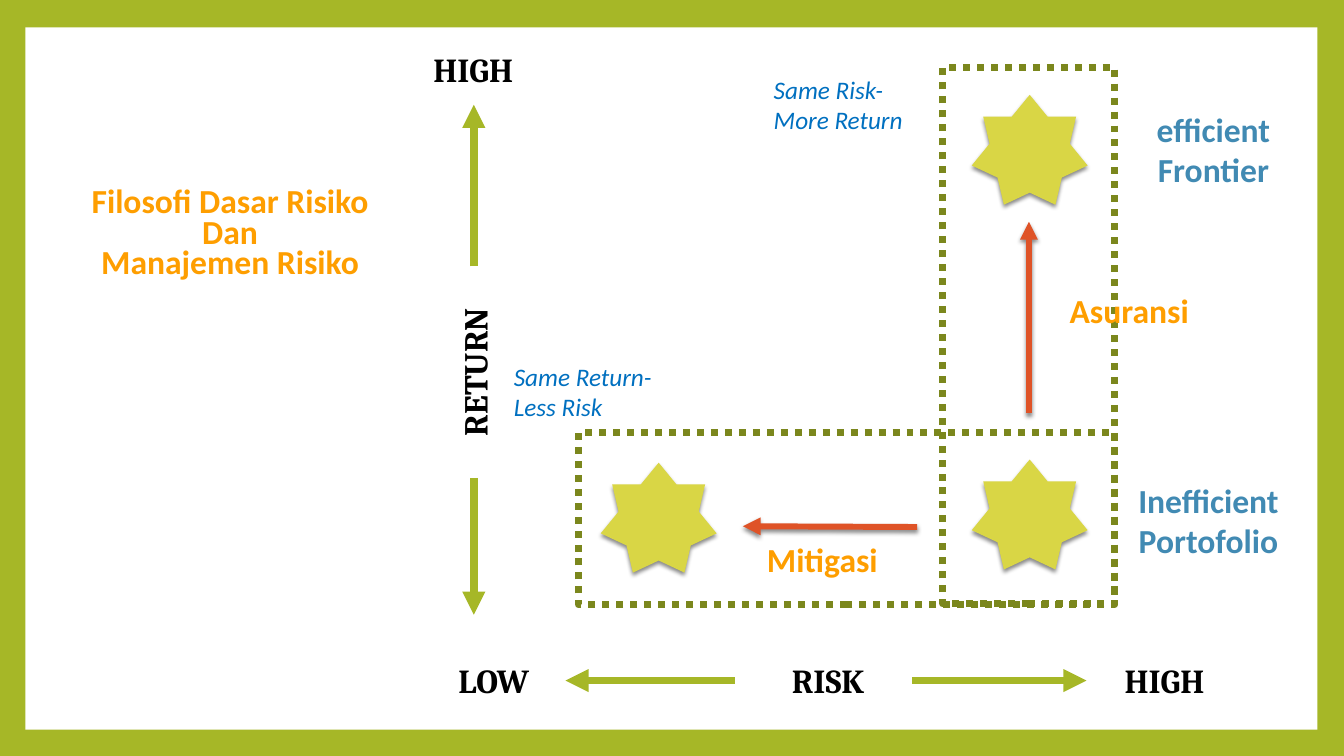
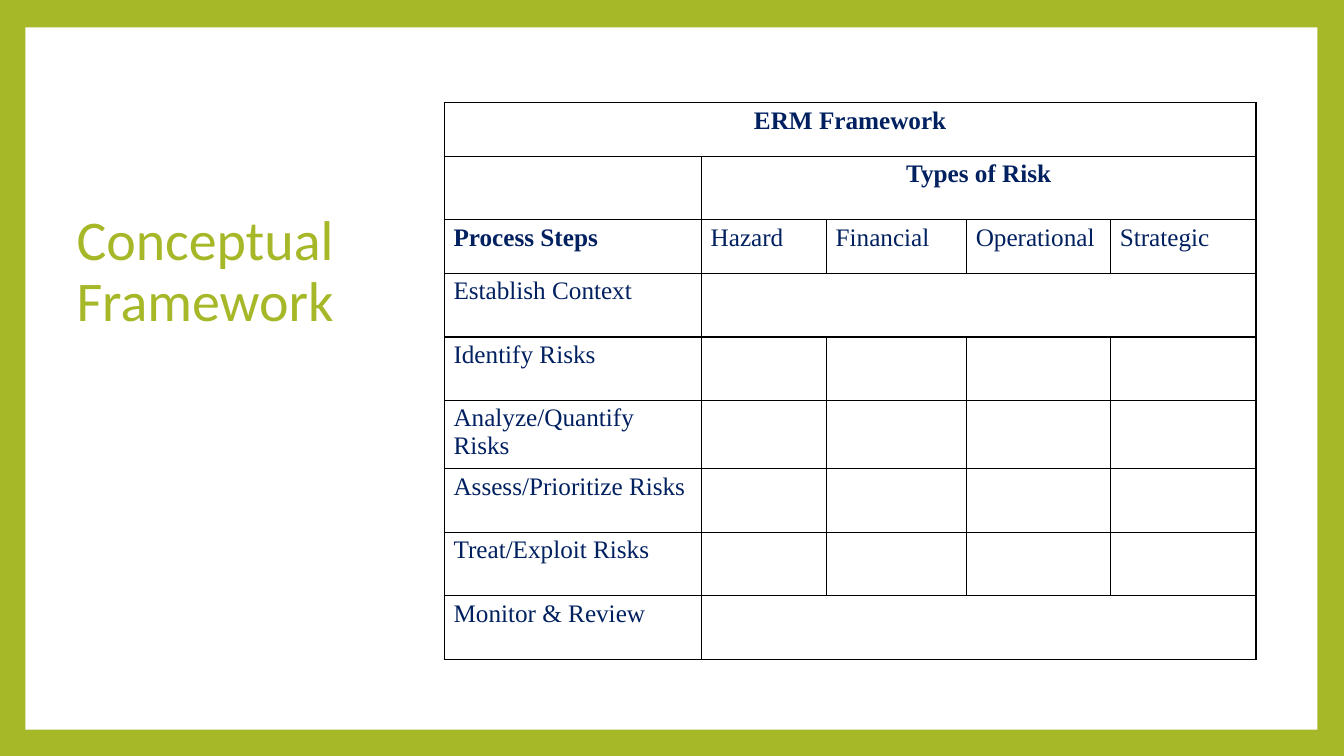
from lxml import etree
from pptx import Presentation, util as u
from pptx.dml.color import RGBColor
from pptx.enum import dml, shapes, text
from pptx.oxml import parse_xml
from pptx.oxml.ns import nsdecls, qn

COLORS = {
    "green": "A6B727", "white": "FFFFFF", "black": "000000",
    "star": "D9D645", "olive": "7B871D", "red": "DF5327",
    "orange": "FE9E00", "steel": "418AB3", "blue": "0070C0", "navy": "002060",
}
STYLES = {
    "axis": {"name": "Cambria", "size": u.Pt(24), "bold": True, "color": "black"},
    "note": {"name": "Calibri", "size": u.Pt(18), "italic": True, "color": "blue"},
    "action": {"name": "Calibri", "size": u.Pt(24), "bold": True, "color": "orange"},
    "position": {"name": "Calibri", "size": u.Pt(24), "bold": True, "color": "steel"},
    "title": {"name": "Calibri", "size": u.Pt(40), "color": "green"},
    "head": {"name": "Times New Roman", "size": u.Pt(18), "bold": True, "color": "navy"},
    "body": {"name": "Times New Roman", "size": u.Pt(18), "bold": False, "color": "navy"},
}
LEFT, CENTER = text.PP_ALIGN.LEFT, text.PP_ALIGN.CENTER


def write(frame, lines, style, align=LEFT, spacing=None):
    """Fill a text frame with one paragraph per line."""
    for number, line in enumerate(lines.split("\n")):
        paragraph = frame.add_paragraph() if number else frame.paragraphs[0]
        paragraph.alignment, paragraph.line_spacing = align, spacing
        run = paragraph.add_run()
        run.text = line
        for key, value in STYLES[style].items():
            if key == "color":
                run.font.color.rgb = RGBColor.from_string(COLORS[value])
            else:
                setattr(run.font, key, value)


def set_shadow(shape, visible):
    """Replace the theme shadow by a soft one, or by none."""
    effects = etree.SubElement(shape._element.spPr, qn("a:effectLst"))
    if visible:
        effects.append(parse_xml(
            f'<a:outerShdw {nsdecls("a")} blurRad="38100" dist="25400" dir="5400000" '
            f'rotWithShape="0"><a:srgbClr val="{COLORS["black"]}">'
            '<a:alpha val="45000"/></a:srgbClr></a:outerShdw>'))


prs = Presentation()
prs.slide_width, prs.slide_height = u.Cm(33.87), u.Cm(19.05)

# Shared green border around a white panel
border = prs.slide_master.background.fill
border.solid()
border.fore_color.rgb = RGBColor.from_string(COLORS["green"])
philosophy, framework = [prs.slides.add_slide(prs.slide_layouts[6]) for _ in range(2)]
for slide in (philosophy, framework):
    panel = slide.shapes.add_shape(shapes.MSO_SHAPE.RECTANGLE,
                                   u.Cm(0.64), u.Cm(0.69), u.Cm(32.56), u.Cm(17.7))
    panel.fill.solid()
    panel.fill.fore_color.rgb = RGBColor.from_string(COLORS["white"])
    panel.line.fill.background()
    set_shadow(panel, False)

# Slide 1: portfolios
for left, top in [(24.49, 2.39), (24.49, 11.58), (15.14, 11.66)]:
    portfolio = philosophy.shapes.add_shape(shapes.MSO_SHAPE.STAR_7_POINT,
                                            u.Cm(left), u.Cm(top), u.Cm(2.92), u.Cm(2.77))
    portfolio.fill.solid()
    portfolio.fill.fore_color.rgb = RGBColor.from_string(COLORS["star"])
    portfolio.line.fill.background()
    set_shadow(portfolio, True)

# Dotted zones: same return, same risk
for zone_box in [(14.58, 10.9, 13.51, 4.34), (23.76, 1.71, 4.34, 13.51)]:
    zone = philosophy.shapes.add_shape(shapes.MSO_SHAPE.RECTANGLE, *map(u.Cm, zone_box))
    zone.fill.background()
    zone.line.color.rgb = RGBColor.from_string(COLORS["olive"])
    zone.line.width = u.Pt(5)
    zone.line.dash_style = dml.MSO_LINE.ROUND_DOT
    set_shadow(zone, False)

# Axis arrows in green, strategy arrows in red
axis_arrow, strategy_arrow = ("green", 5.5, False), ("red", 4.25, True)
for ends, (color, width, shadowed) in [
    ((11.94, 6.71, 11.94, 2.64), axis_arrow),
    ((11.94, 12.04, 11.94, 15.49), axis_arrow),
    ((22.99, 17.15, 27.38, 17.15), axis_arrow),
    ((18.52, 17.15, 14.25, 17.15), axis_arrow),
    ((25.93, 10.41, 25.93, 5.59), strategy_arrow),
    ((23.11, 13.28, 18.72, 13.26), strategy_arrow),
]:
    arrow = philosophy.shapes.add_connector(shapes.MSO_CONNECTOR.STRAIGHT, *map(u.Cm, ends))
    arrow.line.color.rgb = RGBColor.from_string(COLORS[color])
    arrow.line.width = u.Pt(width)
    etree.SubElement(arrow.line._get_or_add_ln(), qn("a:tailEnd"), type="triangle")
    set_shadow(arrow, shadowed)

# Labels of both slides: slide, box, words, style, alignment, line spacing, rotation
for slide, box, words, style, align, spacing, rotation in [
    (philosophy, (11.3, 16.51, 3.28, 1.27), "LOW", "axis", LEFT, None, 0),
    (philosophy, (28.09, 16.51, 3.28, 1.27), "HIGH", "axis", LEFT, None, 0),
    (philosophy, (10.67, 1.12, 3.28, 1.27), "HIGH", "axis", LEFT, None, 0),
    (philosophy, (19.71, 16.51, 3.28, 1.27), "RISK", "axis", LEFT, None, 0),
    (philosophy, (9.68, 8.33, 4.55, 1.27), "RETURN", "axis", LEFT, None, 270),
    (philosophy, (19.25, 1.75, 4.14, 1.8), "Same Risk-More Return", "note", LEFT, None, 0),
    (philosophy, (12.7, 8.97, 4.14, 1.8), "Same Return-Less Risk", "note", LEFT, None, 0),
    (philosophy, (26.62, 7.19, 3.68, 1.27), "Asuransi", "action", CENTER, None, 0),
    (philosophy, (19, 13.46, 3.45, 1.27), "Mitigasi", "action", CENTER, None, 0),
    (philosophy, (28.32, 11.96, 4.27, 2.31), "Inefficient\nPortofolio", "position",
     CENTER, None, 0),
    (philosophy, (28.8, 2.62, 3.56, 2.31), "efficient\nFrontier", "position", CENTER, None, 0),
    (philosophy, (1.85, 4.67, 7.9, 2.62), "Filosofi Dasar Risiko\nDan\nManajemen Risiko",
     "action", CENTER, u.Pt(21.6), 0),
    (framework, (1.68, 5.23, 7.62, 1.75), "Conceptual\nFramework", "title", LEFT, 0.9, 0),
]:
    label = slide.shapes.add_textbox(*map(u.Cm, box))
    label.rotation = rotation
    label.text_frame.word_wrap = True
    write(label.text_frame, words, style, align, spacing)

# Slide 2: risk management table
col_widths = [6.48, 3.15, 3.53, 3.63, 3.66]
row_heights = [1.35, 1.6, 1.35] + [1.6] * 6
steps = ["Establish Context", "Identify Risks", "Analyze/Quantify Risks",
         "Assess/Prioritize Risks", "Treat/Exploit Risks", "Monitor & Review"]
rows = [["ERM Framework"], ["", "Types of Risk"],
        ["Process Steps", "Hazard", "Financial", "Operational", "Strategic"]]
rows += [[step] for step in steps]
headings = {"ERM Framework": CENTER, "Types of Risk": CENTER, "Process Steps": LEFT}

grid = framework.shapes.add_table(len(rows), len(col_widths), u.Cm(11.2), u.Cm(2.59),
                                  u.Cm(sum(col_widths)), u.Cm(sum(row_heights))).table
grid.first_row = grid.horz_banding = False
for column, width in zip(grid.columns, col_widths):
    column.width = u.Cm(width)
for row, height in zip(grid.rows, row_heights):
    row.height = u.Cm(height)

cell_format = {"margin_left": u.Cm(0.23), "margin_right": u.Cm(0.23),
               "margin_top": u.Cm(0.1), "margin_bottom": u.Cm(0.1)}
for cell in grid.iter_cells():
    for key, value in cell_format.items():
        setattr(cell, key, value)
    cell.fill.background()
    for position, side in enumerate(("lnL", "lnR", "lnT", "lnB")):
        cell._tc.get_or_add_tcPr().insert(position, parse_xml(
            f'<a:{side} {nsdecls("a")} w="12700"><a:solidFill>'
            f'<a:srgbClr val="{COLORS["black"]}"/></a:solidFill></a:{side}>'))

# Spanning cells, then the words
for row, first in [(0, 0), (1, 1), (3, 1), (8, 1)]:
    grid.cell(row, first).merge(grid.cell(row, len(col_widths) - 1))
for row, entries in enumerate(rows):
    for col, entry in enumerate(entries):
        if entry:
            write(grid.cell(row, col).text_frame, entry,
                  "head" if entry in headings else "body", headings.get(entry, LEFT))

prs.save("out.pptx")
